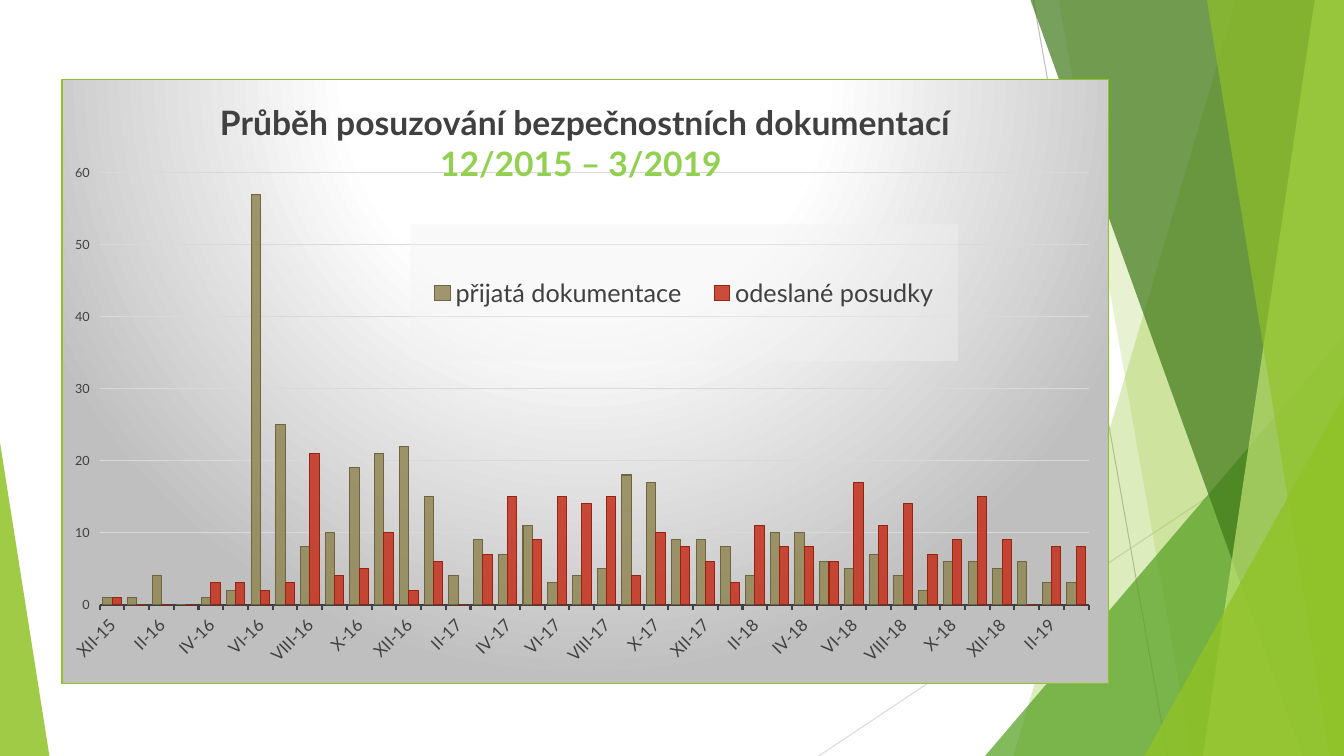
from pptx import Presentation
from pptx.chart.data import CategoryChartData
from pptx.dml.color import RGBColor
from pptx.enum.chart import XL_CHART_TYPE as ChartType, XL_LEGEND_POSITION as LegendPos, XL_TICK_MARK as Tick
from pptx.enum.shapes import MSO_CONNECTOR as Connector
from pptx.oxml import parse_xml
from pptx.oxml.ns import nsdecls, qn
from pptx.util import Inches, Pt

WIDTH, HEIGHT = 13.33, 7.5
FONT = "Lato"
COLORS = {
    "lime": "90C226", "green": "54A021", "forest": "3F7819", "pale": "C0E474",
    "accent": "92D050", "text": "404040", "grid": "D9D9D9", "silver": "BFBFBF",
    "white": "FFFFFF", "haze": "F2F2F2", "olive": "918655", "olive edge": "6D6540",
    "red": "C42F1A", "red edge": "932313",
}
# Straight-edged facets: colour, opacity in percent, corners in inches
FACETS = [
    ("lime", 30, [(12.26, 0), (10.05, HEIGHT), (WIDTH, HEIGHT), (WIDTH, 0)]),
    ("lime", 20, [(10.5, 0), (11.82, HEIGHT), (WIDTH, HEIGHT), (WIDTH, 0)]),
    ("green", 72, [(9.77, HEIGHT), (WIDTH, 3.33), (WIDTH, HEIGHT)]),
    ("forest", 70, [(10.22, 0), (12.92, HEIGHT), (WIDTH, HEIGHT), (WIDTH, 0)]),
    ("pale", 70, [(13.04, 0), (11.93, HEIGHT), (WIDTH, HEIGHT), (WIDTH, 0)]),
    ("lime", 65, [(11.97, 0), (13.19, HEIGHT), (WIDTH, HEIGHT), (WIDTH, 0)]),
    ("lime", 80, [(11.35, HEIGHT), (WIDTH, 3.93), (WIDTH, HEIGHT)]),
    ("lime", 85, [(0, 4.39), (0.49, HEIGHT), (0, HEIGHT)]),
]
RAYS = [("grid", (8.12, HEIGHT), (WIDTH, 4.03)), ("silver", (10.25, 0), (11.58, HEIGHT))]
ROMAN = "I II III IV V VI VII VIII IX X XI XII".split()
# December 2015 to March 2019
MONTHS = [f"{ROMAN[n % 12]}-{15 + n // 12}" for n in range(11, 51)]
SERIES = [
    ("přijatá dokumentace", "olive",
     [1, 1, 4, 0, 1, 2, 57, 25, 8, 10, 19, 21, 22, 15, 4, 9, 7, 11, 3, 4,
      5, 18, 17, 9, 9, 8, 4, 10, 10, 6, 5, 7, 4, 2, 6, 6, 5, 6, 3, 3]),
    ("odeslané posudky", "red",
     [1, 0, 0, 0, 3, 3, 2, 3, 21, 4, 5, 10, 2, 6, 0, 7, 15, 9, 15, 14,
      15, 4, 10, 8, 6, 3, 11, 8, 8, 6, 17, 11, 14, 7, 9, 15, 9, 0, 8, 8]),
]


def rgb(name):
    return RGBColor.from_string(COLORS[name])


def set_line(line, color, width=0.75):
    line.color.rgb = rgb(color)
    line.width = Pt(width)


def set_font(font, size, color="text", bold=False):
    font.name, font.size, font.bold = FONT, Pt(size), bold
    font.color.rgb = rgb(color)


def set_fill(fill, element, color, opacity):
    fill.solid()
    fill.fore_color.rgb = rgb(color)
    tint = element.find(".//" + qn("a:srgbClr"))
    tint.append(parse_xml(f'<a:alpha {nsdecls("a")} val="{opacity * 1000}"/>'))


def set_layout(element, box, inner=False):
    """Place a chart part by shares of the chart: left, top and, if given, width, height."""
    for old in element.findall(qn("c:layout")):
        element.remove(old)
    target = '<c:layoutTarget val="inner"/>' if inner else ""
    modes = '<c:xMode val="edge"/><c:yMode val="edge"/>'
    shares = "".join(f'<c:{key} val="{share}"/>' for key, share in zip("xywh", box))
    layout = parse_xml(f'<c:layout {nsdecls("c")}><c:manualLayout>{target}{modes}{shares}'
                       '</c:manualLayout></c:layout>')
    overlay = element.find(qn("c:overlay"))
    if overlay is None:
        element.insert(0, layout)
    else:
        overlay.addprevious(layout)


def add_backdrop(page):
    for color, start, end in RAYS:
        ray = page.shapes.add_connector(Connector.STRAIGHT, *map(Inches, start + end))
        set_line(ray.line, color)
        ray._element.spPr.append(parse_xml(f'<a:effectLst {nsdecls("a")}/>'))
    for color, opacity, corners in FACETS:
        # Freeform units are whole numbers, so the outline is drawn in EMU
        points = [(Inches(x), Inches(y)) for x, y in corners]
        builder = page.shapes.build_freeform(*points[0])
        builder.add_line_segments(points[1:], close=True)
        facet = builder.convert_to_shape()
        facet.shadow.inherit = False
        set_fill(facet.fill, facet._element.spPr, color, opacity)
        facet.line.fill.background()


def add_title(chart):
    frame = chart.chart_title.text_frame
    frame.text = "Průběh posuzování bezpečnostních dokumentací\n12/2015 – 3/2019 "
    for para, color in zip(frame.paragraphs, ("text", "accent")):
        set_font(para.runs[0].font, 24, color, bold=True)
    set_layout(chart.chart_title._element, (0.148, 0.03))


def add_legend(chart):
    chart.has_legend = True
    legend = chart.legend
    legend.position = LegendPos.RIGHT
    legend.include_in_layout = True
    set_font(legend.font, 18)
    set_layout(legend._element, (0.333, 0.24, 0.523, 0.226))
    legend._element.find(qn("c:overlay")).addnext(parse_xml(
        f'<c:spPr {nsdecls("c", "a")}><a:solidFill><a:srgbClr val="{COLORS["haze"]}">'
        '<a:alpha val="39000"/></a:srgbClr></a:solidFill><a:ln><a:noFill/></a:ln></c:spPr>'))


def style_axes(chart):
    months, counts = chart.category_axis, chart.value_axis
    months.major_tick_mark = counts.major_tick_mark = Tick.OUTSIDE
    set_font(months.tick_labels.font, 12)
    set_line(months.format.line, "text", 1.5)
    months._element.find(qn("c:txPr")).find(qn("a:bodyPr")).set("rot", "-2700000")
    months._element.find(qn("c:noMultiLvlLbl")).addprevious(
        parse_xml(f'<c:tickLblSkip {nsdecls("c")} val="2"/>'))
    counts.minimum_scale, counts.maximum_scale, counts.major_unit = 0, 60, 10
    set_font(counts.tick_labels.font, 9)
    counts.format.line.fill.background()
    set_line(counts.major_gridlines.format.line, "grid")


def add_background(chart):
    stops = "".join(f'<a:gs pos="{share * 1000}"><a:srgbClr val="{COLORS[color]}"/></a:gs>'
                    for share, color in ((0, "white"), (39, "white"), (100, "silver")))
    chart._chartSpace.find(qn("c:chart")).addnext(parse_xml(
        f'<c:spPr {nsdecls("c", "a")}><a:gradFill><a:gsLst>{stops}</a:gsLst><a:path path="circle">'
        '<a:fillToRect l="50000" t="-80000" r="50000" b="180000"/></a:path></a:gradFill>'
        f'<a:ln w="9525"><a:solidFill><a:srgbClr val="{COLORS["lime"]}"/></a:solidFill></a:ln>'
        '</c:spPr>'))


def add_review_chart(page, box):
    data = CategoryChartData()
    data.categories = MONTHS
    for name, _, values in SERIES:
        data.add_series(name, values)
    chart = page.shapes.add_chart(ChartType.COLUMN_CLUSTERED, *map(Inches, box), data).chart
    set_font(chart.font, 10)
    plot = chart.plots[0]
    plot.gap_width, plot.overlap, plot.vary_by_categories = 65, 0, False
    for series, (_, color, _) in zip(plot.series, SERIES):
        set_fill(series.format.fill, series._element, color, 85)
        set_line(series.format.line, f"{color} edge")
    add_title(chart)
    add_legend(chart)
    style_axes(chart)
    add_background(chart)
    plot_area = chart._chartSpace.find(".//" + qn("c:plotArea"))
    set_layout(plot_area, (0.036, 0.155, 0.945, 0.714), inner=True)


def main():
    deck = Presentation()
    deck.slide_width, deck.slide_height = Inches(WIDTH), Inches(HEIGHT)
    page = deck.slides.add_slide(deck.slide_layouts[6])
    add_backdrop(page)
    add_review_chart(page, (0.61, 0.78, 10.39, 6.01))
    deck.save("out.pptx")


if __name__ == "__main__":
    main()
